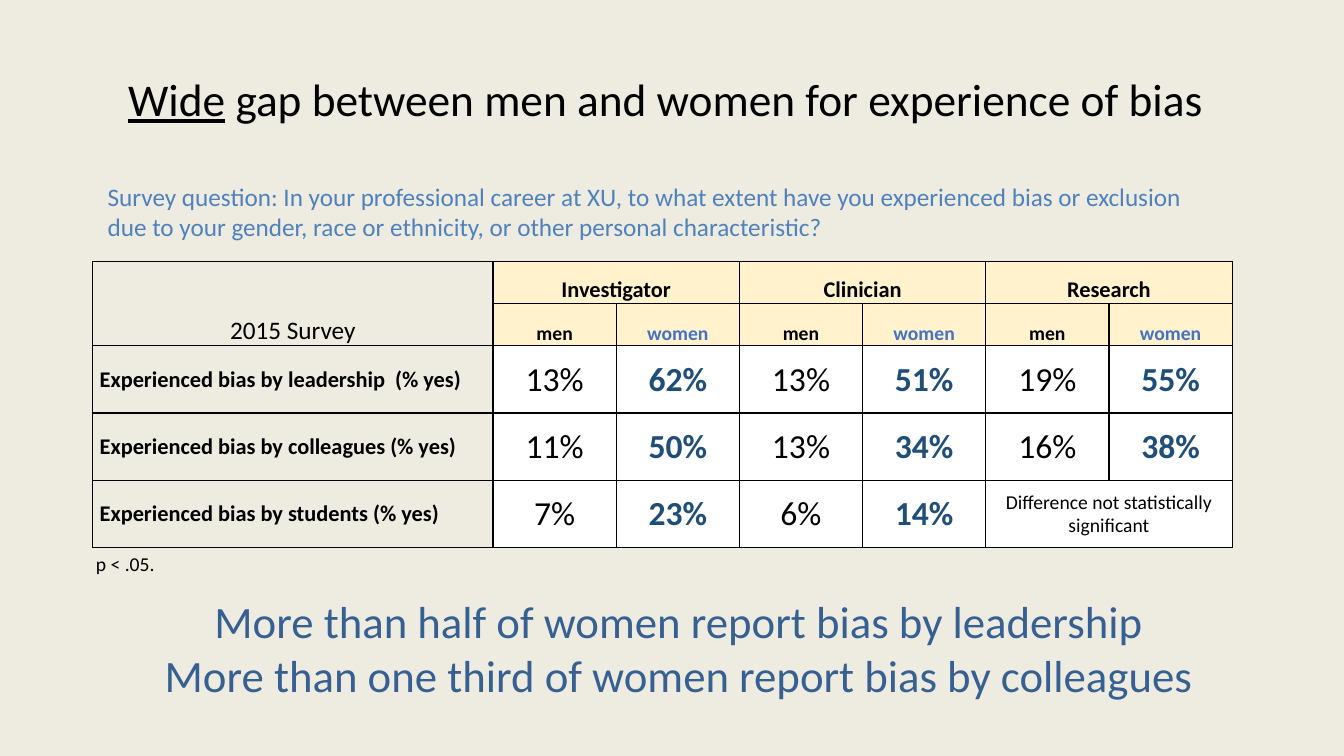
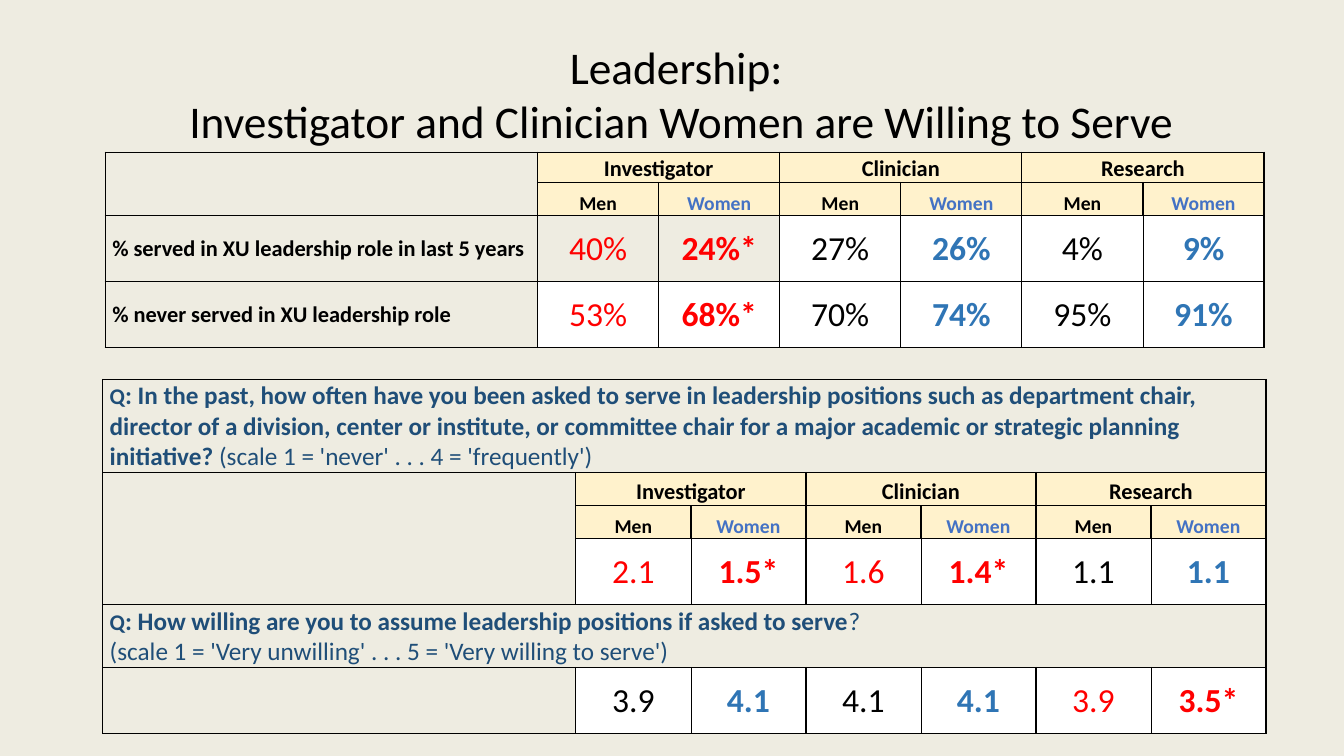
from lxml.etree import SubElement
from pptx import Presentation
from pptx.dml.color import RGBColor
from pptx.enum.text import MSO_ANCHOR, PP_ALIGN
from pptx.oxml.ns import qn
from pptx.util import Pt

COLORS = {
    "background": "EEECE1",
    "text": "000000",
    "header": "FFF2CC",
    "value": "FFFFFF",
    "women": "4472C4",
    "navy": "1F4E78",
    "blue": "2F75B5",
    "significant": "FF0000",
    "conclusion": "376092",
    "survey": "4F81BD",
}
FONT = "Calibri"
GROUPS = ["Investigator", "Clinician", "Research"]


def style(font, size, color="text", bold=False):
    font.name = FONT
    font.size = Pt(size)
    font.bold = bold
    font.color.rgb = RGBColor.from_string(COLORS[color])


def add_slide(presentation):
    slide = presentation.slides.add_slide(presentation.slide_layouts[6])
    slide.background.fill.solid()
    slide.background.fill.fore_color.rgb = RGBColor.from_string(COLORS["background"])
    return slide


def add_text(slide, box, lines, size, color="text", align=PP_ALIGN.LEFT):
    shape = slide.shapes.add_textbox(*map(Pt, box))
    frame = shape.text_frame
    frame.word_wrap = True
    frame.text = "\n".join(lines)
    for paragraph in frame.paragraphs:
        paragraph.alignment = align
        style(paragraph.font, size, color)
    return frame


def add_title(slide, left, top, text, underlined="", bottom_margin=3.6):
    frame = add_text(slide, (left, top, 828, 69), [underlined], 32.4, align=PP_ALIGN.CENTER)
    frame.vertical_anchor = MSO_ANCHOR.MIDDLE
    frame.margin_bottom = Pt(bottom_margin)
    paragraph = frame.paragraphs[0]
    for run in paragraph.runs:
        run.font.underline = True
    for index, line in enumerate(text.split("\n")):
        if index:
            paragraph.add_line_break()
        paragraph.add_run().text = line


def add_border(cell):
    properties = cell._tc.get_or_add_tcPr()
    for side in ("lnL", "lnR", "lnT", "lnB"):
        line = SubElement(properties, qn(f"a:{side}"), w=str(Pt(1)))
        fill = SubElement(line, qn("a:solidFill"))
        SubElement(fill, qn("a:srgbClr"), val=COLORS["text"])


def set_border(cell, side, width):
    line = cell._tc.get_or_add_tcPr().find(qn(f"a:{side}"))
    line.set("w", str(Pt(width)))
    if not width:
        line.remove(line[0])
        SubElement(line, qn("a:noFill"))


def open_border(first, second, sides):
    for cell, side in zip((first, second), sides):
        set_border(cell, side, 0)


def add_grid(slide, left, top, label_widths, value_width, heights):
    widths = label_widths + [value_width] * (2 * len(GROUPS))
    frame = slide.shapes.add_table(
        len(heights), len(widths), Pt(left), Pt(top), Pt(sum(widths)), Pt(sum(heights))
    )
    table = frame.table
    table.first_row = table.horz_banding = False
    for column, width in zip(table.columns, widths):
        column.width = Pt(width)
    for row, height in zip(table.rows, heights):
        row.height = Pt(height)
    for cell in table.iter_cells():
        add_border(cell)
        cell.fill.background()
        cell.margin_left = cell.margin_top = cell.margin_right = Pt(0.72)
        cell.margin_bottom = Pt(0)
        style(cell.text_frame.paragraphs[0].font, 14)
    return table


def write_cell(cell, text, size, color="text", bold=False, fill=None,
               anchor=MSO_ANCHOR.MIDDLE, align=PP_ALIGN.CENTER):
    cell.text = text
    cell.vertical_anchor = anchor
    paragraph = cell.text_frame.paragraphs[0]
    paragraph.alignment = align
    style(paragraph.font, size, color, bold)
    if fill:
        cell.fill.solid()
        cell.fill.fore_color.rgb = RGBColor.from_string(COLORS[fill])


def group_column(table, index):
    return len(table.columns) - 2 * (len(GROUPS) - index)


def write_header(table, row, men, women):
    for index, group in enumerate(GROUPS):
        column = group_column(table, index)
        cell = table.cell(row, column)
        cell.merge(table.cell(row, column + 1))
        write_cell(cell, group, 16, "text", True, "header", MSO_ANCHOR.BOTTOM)
        for offset, (text, color) in enumerate([(men, "text"), (women, "women")]):
            write_cell(table.cell(row + 1, column + offset), text, 14, color, True,
                       "header", MSO_ANCHOR.BOTTOM)


def write_label(table, row, text):
    cell = table.cell(row, 0)
    last_column = group_column(table, 0) - 1
    if last_column:
        cell.merge(table.cell(row, last_column))
    write_cell(cell, text, 16, bold=True, align=PP_ALIGN.LEFT)
    cell.margin_left = Pt(5)


def write_values(table, row, pairs, women_color, unfilled=(), inner_width=0.5):
    for index, (men, women) in enumerate(pairs):
        significant = women.endswith("*")
        fill = None if index in unfilled else "value"
        column = group_column(table, index)
        men_cell, women_cell = table.cell(row, column), table.cell(row, column + 1)
        write_cell(men_cell, men, 24, "significant" if significant else "text", False, fill)
        write_cell(women_cell, women, 24,
                   "significant" if significant else women_color, True, fill)
        set_border(men_cell, "lnR", inner_width)
        set_border(women_cell, "lnL", inner_width)


def write_question(table, row, question, ending, scale=""):
    cell = table.cell(row, 0)
    cell.merge(table.cell(row, 2 * len(GROUPS)))
    cell.margin_left = Pt(5)
    cell.vertical_anchor = MSO_ANCHOR.BOTTOM
    frame = cell.text_frame
    paragraph = frame.paragraphs[0]
    for text, size, bold in [("Q", 16, True), (": " + question, 18, True), (ending, 18, False)]:
        run = paragraph.add_run()
        run.text = text
        style(run.font, size, "navy", bold)
    if scale:
        paragraph = frame.add_paragraph()
        paragraph.text = scale
        style(paragraph.font, 18, "navy")


def add_bias_table(slide, left, top):
    table = add_grid(slide, left, top, [286], 88, [30, 30, 48, 48, 48])
    open_border(table.cell(0, 0), table.cell(1, 0), ("lnB", "lnT"))
    write_cell(table.cell(1, 0), "2015 Survey", 18, anchor=MSO_ANCHOR.BOTTOM)
    write_header(table, 0, "men", "women")
    rows = [
        ("Experienced bias by leadership  (% yes)", [("13%", "62%"), ("13%", "51%"), ("19%", "55%")]),
        ("Experienced bias by colleagues (% yes)", [("11%", "50%"), ("13%", "34%"), ("16%", "38%")]),
        ("Experienced bias by students (% yes)", [("7%", "23%"), ("6%", "14%")]),
    ]
    for row, (label, pairs) in enumerate(rows, 2):
        write_label(table, row, label)
        write_values(table, row, pairs, "navy", inner_width=1)
    remark = table.cell(4, 5)
    remark.merge(table.cell(4, 6))
    write_cell(remark, "Difference not statistically significant", 14, fill="value")


def add_role_table(slide, left, top):
    table = add_grid(slide, left, top, [43.2, 265.6], 86.5, [21.6, 23.7, 47.2, 47.2])
    for index in range(2):
        open_border(table.cell(index, 0), table.cell(index, 1), ("lnR", "lnL"))
        open_border(table.cell(0, index), table.cell(1, index), ("lnB", "lnT"))
    write_header(table, 0, "Men", "Women")
    write_label(table, 2, "% served in XU leadership role in last 5 years")
    write_values(table, 2, [("40%", "24%*"), ("27%", "26%"), ("4%", "9%")], "blue", unfilled=(0,))
    write_label(table, 3, "% never served in XU leadership role")
    write_values(table, 3, [("53%", "68%*"), ("70%", "74%"), ("95%", "91%")], "blue")


def add_question_table(slide, left, top):
    table = add_grid(slide, left, top, [338], 82.15, [66.5, 23.7, 23.7, 47, 45, 47])
    write_question(
        table, 0,
        "In the past, how often have you been asked to serve in leadership positions such as "
        "department chair, director of a division, center or institute, or committee chair for "
        "a major academic or strategic planning initiative? ",
        "(scale 1 = 'never' . . . 4 = 'frequently')",
    )
    table.cell(1, 0).merge(table.cell(3, 0))
    write_header(table, 1, "Men", "Women")
    write_values(table, 3, [("2.1", "1.5*"), ("1.6", "1.4*"), ("1.1", "1.1")], "blue")
    write_question(
        table, 4, "How willing are you to assume leadership positions if asked to serve", "?",
        "(scale 1 = 'Very unwilling' . . . 5 = 'Very willing to serve')",
    )
    write_values(table, 5, [("3.9", "4.1"), ("4.1", "4.1"), ("3.9", "3.5*")], "blue")


def build_bias_slide(presentation):
    slide = add_slide(presentation)
    add_title(slide, 61.4, 46, " gap between men and women for experience of bias", "Wide", 23.6)
    add_text(slide, (80, 420.8, 810, 85),
             ["More than half of women report bias by leadership",
              "More than one third of women report bias by colleagues"],
             32, "conclusion", PP_ALIGN.CENTER)
    add_bias_table(slide, 66.2, 187)
    add_text(slide, (61.4, 391, 657, 24.5), ["p < .05."], 14)
    add_text(slide, (69.8, 125.6, 807, 51),
             ["Survey question: In your professional career at XU, to what extent have you "
              "experienced bias or exclusion due to your gender, race or ethnicity, or other "
              "personal characteristic?"], 18, "survey")


def build_leadership_slide(presentation):
    slide = add_slide(presentation)
    add_title(slide, 72.7, 32.2, "Leadership: \nInvestigator and Clinician Women are Willing to Serve")
    add_role_table(slide, 75.2, 108.7)
    add_question_table(slide, 73.4, 271)


def main():
    presentation = Presentation()
    presentation.slide_width = Pt(960)
    presentation.slide_height = Pt(540)
    build_bias_slide(presentation)
    build_leadership_slide(presentation)
    presentation.save("out.pptx")


if __name__ == "__main__":
    main()
